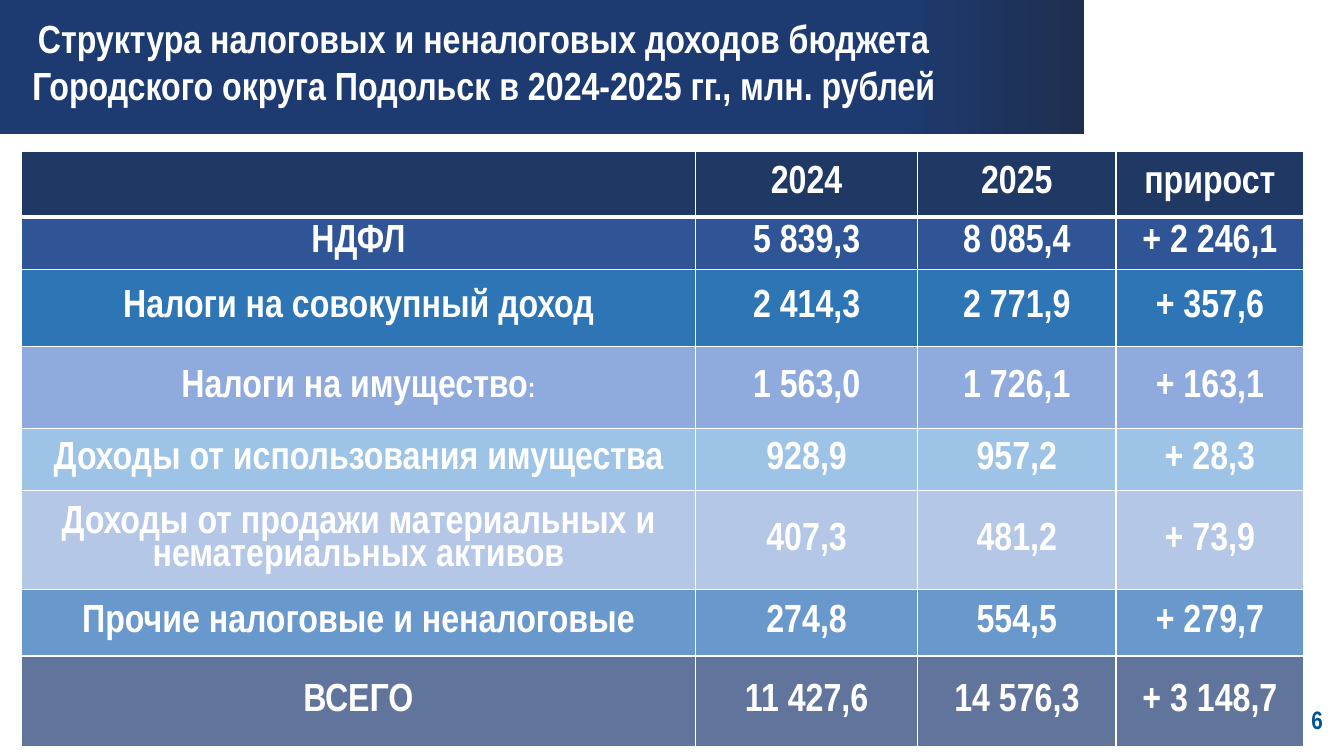
from lxml import etree
from pptx import Presentation
from pptx import util as u
from pptx.dml import color
from pptx.enum import shapes, text
from pptx.oxml import ns

FONT = "Arial Narrow"
COLORS = {
    "white": "FFFFFF", "banner": "1D3B70", "banner_end": "1F2E4F",
    "number": "005493", "header": "203864", "income_tax": "2F5597",
    "turnover_tax": "2E75B6", "property_tax": "8FAADC", "property_use": "9DC3E6",
    "asset_sales": "B4C7E7", "other": "6999CC", "total": "002060",
}
TOTAL_OPACITY = 62
COLUMN_WIDTHS = [6.69, 2.2, 1.97, 1.86]
# Each row: height, colour, cell texts
ROWS = [
    (0.65, "header", ["", "2024", "2025", "прирост"]),
    (0.52, "income_tax", ["НДФЛ", "5 839,3", "8 085,4", "+ 2 246,1"]),
    (0.77, "turnover_tax", ["Налоги на совокупный доход", "2 414,3", "2 771,9", "+ 357,6"]),
    (0.81, "property_tax", ["Налоги на имущество", "1 563,0", "1 726,1", "+ 163,1"]),
    (0.62, "property_use", ["Доходы от использования имущества", "928,9", "957,2", "+ 28,3"]),
    (0.98, "asset_sales", ["Доходы от продажи материальных и нематериальных активов",
                           "407,3", "481,2", "+ 73,9"]),
    (0.66, "other", ["Прочие налоговые и неналоговые", "274,8", "554,5", "+ 279,7"]),
    (0.9, "total", ["ВСЕГО", "11 427,6", "14 576,3", "+ 3 148,7"]),
]


def rgb(name):
    return color.RGBColor.from_string(COLORS[name])


def style_font(font, size, color_name="white"):
    font.name = FONT
    font.size = u.Pt(size)
    font.bold = True
    font.color.rgb = rgb(color_name)


def add_banner(slide):
    banner = slide.shapes.add_shape(
        shapes.MSO_SHAPE.RECTANGLE, 0, 0, u.Inches(10.75), u.Inches(1.33))
    banner.shadow.inherit = False
    banner.line.fill.background()
    banner.fill.gradient()
    banner.fill.gradient_angle = 0
    stops = banner.fill.gradient_stops
    for stop, position, name in zip(stops, (0.83, 1), ("banner", "banner_end")):
        stop.position = position
        stop.color.rgb = rgb(name)


def add_text(slide, bounds, words, size, color_name, align, wrap):
    box = slide.shapes.add_textbox(*(u.Inches(length) for length in bounds))
    frame = box.text_frame
    frame.word_wrap = wrap
    frame.margin_left = frame.margin_right = u.Inches(0.05)
    frame.margin_top = frame.margin_bottom = u.Inches(0.05)
    frame.text = words
    para = frame.paragraphs[0]
    para.alignment = align
    style_font(para.runs[0].font, size, color_name)


def set_borders(cell, top, bottom):
    """Draw white borders; top and bottom are widths in points."""
    properties = cell._tc.get_or_add_tcPr()
    sides = (("lnL", 1), ("lnR", 1), ("lnT", top), ("lnB", bottom))
    for tag, width in sides:
        line = etree.SubElement(properties, ns.qn(f"a:{tag}"), w=str(u.Pt(width)))
        fill = etree.SubElement(line, ns.qn("a:solidFill"))
        etree.SubElement(fill, ns.qn("a:srgbClr"), val=COLORS["white"])


def fill_cell(cell, color_name):
    cell.fill.solid()
    cell.fill.fore_color.rgb = rgb(color_name)
    if color_name == "total":
        tint = cell._tc.tcPr.find(ns.qn("a:solidFill")).find(ns.qn("a:srgbClr"))
        etree.SubElement(tint, ns.qn("a:alpha"), val=str(TOTAL_OPACITY * 1000))


def write_cell(cell, words):
    cell.margin_left = cell.margin_right = u.Inches(0.03)
    cell.margin_top = cell.margin_bottom = u.Inches(0.03)
    cell.vertical_anchor = text.MSO_ANCHOR.MIDDLE
    cell.text = words
    para = cell.text_frame.paragraphs[0]
    para.alignment = text.PP_ALIGN.CENTER
    para.line_spacing = 0.9
    style_font(para.font, 28)
    for span in para.runs:
        style_font(span.font, 28)


def add_income_table(slide):
    heights = [height for height, _, _ in ROWS]
    table = slide.shapes.add_table(
        len(ROWS), len(COLUMN_WIDTHS), u.Inches(0.21), u.Inches(1.5),
        u.Inches(sum(COLUMN_WIDTHS)), u.Inches(sum(heights))).table
    for column, width in zip(table.columns, COLUMN_WIDTHS):
        column.width = u.Inches(width)
    for index, (height, color_name, texts) in enumerate(ROWS):
        table.rows[index].height = u.Inches(height)
        for cell, words in zip(table.rows[index].cells, texts):
            write_cell(cell, words)
            set_borders(cell, 3 if index == 1 else 1, 3 if index == 0 else 1)
            fill_cell(cell, color_name)
        if color_name == "property_tax":
            colon = table.cell(index, 0).text_frame.paragraphs[0].add_run()
            colon.text = ":"
            style_font(colon.font, 20)


def main():
    deck = Presentation()
    deck.slide_width = u.Inches(13.33)
    deck.slide_height = u.Inches(7.5)
    page = deck.slides.add_slide(deck.slide_layouts[6])
    add_banner(page)
    add_text(page, (12.94, 6.94, 0.23, 0.39), "6", 18, "number",
             text.PP_ALIGN.RIGHT, False)
    add_text(page, (0.16, 0.09, 9.27, 1.04),
             "Структура налоговых и неналоговых доходов бюджета "
             "Городского округа Подольск в 2024-2025 гг., млн. рублей",
             28, "white", text.PP_ALIGN.CENTER, True)
    add_income_table(page)
    deck.save("out.pptx")


if __name__ == "__main__":
    main()
